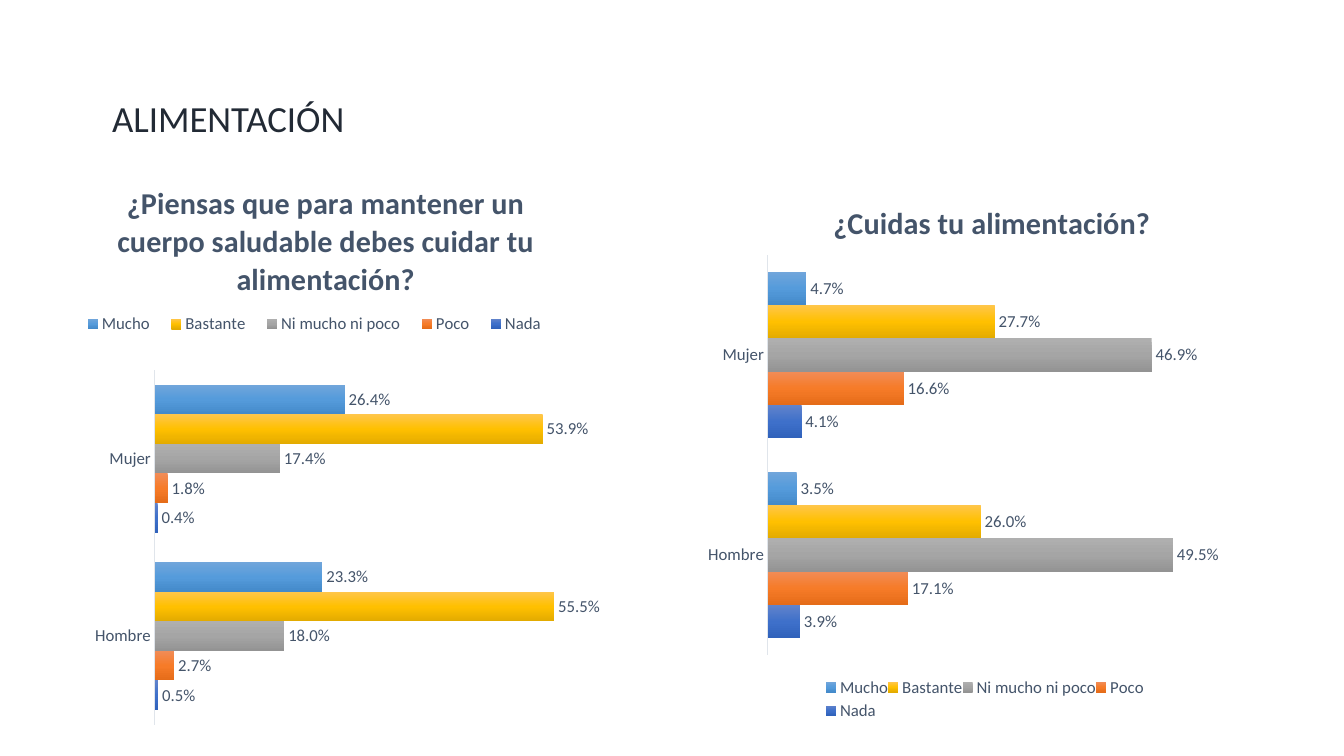
from dataclasses import dataclass

from pptx import Presentation
from pptx.chart.data import CategoryChartData
from pptx.dml.color import RGBColor
from pptx.enum.chart import XL_CHART_TYPE, XL_LABEL_POSITION, XL_LEGEND_POSITION, XL_TICK_MARK
from pptx.enum.text import MSO_ANCHOR, PP_ALIGN
from pptx.oxml import parse_xml
from pptx.oxml.ns import qn
from pptx.util import Pt

BAR = XL_CHART_TYPE.BAR_CLUSTERED
OUTSIDE = XL_LABEL_POSITION.OUTSIDE_END
BOTTOM = XL_LEGEND_POSITION.BOTTOM
NO_TICK = XL_TICK_MARK.NONE
TOP = MSO_ANCHOR.TOP
LEFT = PP_ALIGN.LEFT
NS_C = "http://schemas.openxmlformats.org/drawingml/2006/chart"
NS_A = "http://schemas.openxmlformats.org/drawingml/2006/main"

TITLE = "ALIMENTACIÓN"
TITLE_BOX = (102, 96, 1190, 77)
SEXES = ("Hombre", "Mujer")
ANSWERS = ("Nada", "Poco", "Ni mucho ni poco", "Bastante", "Mucho")
CHARTS = [
    {
        "question": "¿Piensas que para mantener un cuerpo saludable debes cuidar tu alimentación?",
        "box": (38, 153, 562, 573),
        "title_at": (112, 176),
        "plot": (155, 370, 433, 355),
        "legend": (72, 309, 486, 30),
        "values": [(0.005, 0.004), (0.027, 0.018), (0.18, 0.174), (0.555, 0.539), (0.233, 0.264)],
    },
    {
        "question": "¿Cuidas tu alimentación?",
        "box": (698, 172, 574, 552),
        "title_at": (828, 196),
        "plot": (768, 255, 491, 400),
        "legend": (826, 674, 318, 50),
        "values": [(0.039, 0.041), (0.171, 0.166), (0.495, 0.469), (0.26, 0.277), (0.035, 0.047)],
    },
]


@dataclass(frozen=True)
class Theme:
    font: str = "Calibri"
    title: str = "222A35"
    text: str = "44546A"
    axis: str = "E0E5EB"
    title_size: float = 26.3
    question_size: float = 21.6
    label_size: float = 12
    gradients: tuple = (
        ("6183CB", "3E70CA", "3062BB"),
        ("F18C57", "F67B28", "E56C19"),
        ("AFAFAF", "A5A5A5", "939393"),
        ("FFC64B", "FFC000", "E3AB00"),
        ("71A6DB", "559BDB", "448ACA"),
    )


T = Theme()
NUMBER_FORMAT = "###0.0%"


def px(n):
    return round(n * 914400 / 100.8)


def style(font, size, color, bold=False):
    font.name, font.size, font.bold = T.font, Pt(size), bold
    font.color.rgb = RGBColor.from_string(color)


def place(element, index, box, area, inner=False):
    for old in element.findall(qn("c:layout")):
        element.remove(old)
    x, y, w, h = box
    parts = [("xMode", "edge"), ("yMode", "edge")]
    if inner:
        parts.insert(0, ("layoutTarget", "inner"))
    parts += [("x", round((area[0] - x) / w, 4)), ("y", round((area[1] - y) / h, 4))]
    if len(area) == 4:
        parts += [("w", round(area[2] / w, 4)), ("h", round(area[3] / h, 4))]
    body = "".join(f'<c:{name} val="{val}"/>' for name, val in parts)
    element.insert(index, parse_xml(
        f'<c:layout xmlns:c="{NS_C}"><c:manualLayout>{body}</c:manualLayout></c:layout>'))


def shade(series, colors):
    series.format.fill.solid()
    sp_pr = series._element.find(qn("c:spPr"))
    stops = "".join(f'<a:gs pos="{i * 50000}"><a:srgbClr val="{c}"/></a:gs>'
                    for i, c in enumerate(colors))
    sp_pr.replace(sp_pr.find(qn("a:solidFill")), parse_xml(
        f'<a:gradFill xmlns:a="{NS_A}" rotWithShape="1"><a:gsLst>{stops}</a:gsLst>'
        '<a:lin ang="5400000" scaled="0"/></a:gradFill>'))


def add_bars(s, spec):
    data = CategoryChartData(number_format=NUMBER_FORMAT)
    data.categories = SEXES
    for answer, values in zip(ANSWERS, spec["values"]):
        data.add_series(answer, values)
    box = spec["box"]
    chart = s.shapes.add_chart(BAR, *map(px, box), data).chart
    style(chart.font, T.label_size, T.text)

    chart.has_title = True
    tf = chart.chart_title.text_frame
    tf.text = spec["question"]
    style(tf.paragraphs[0].font, T.question_size, T.text, True)
    place(chart.chart_title._element, 1, box, spec["title_at"])

    chart.has_legend = True
    chart.legend.position = BOTTOM
    chart.legend.include_in_layout = False
    style(chart.legend.font, T.label_size, T.text)
    place(chart.legend._element, 1, box, spec["legend"])

    cat = chart.category_axis
    cat.major_tick_mark = cat.minor_tick_mark = NO_TICK
    cat.format.line.color.rgb = RGBColor.from_string(T.axis)
    cat.format.line.width = Pt(0.75)
    val = chart.value_axis
    val.visible = False
    val.has_major_gridlines = False
    val.minimum_scale, val.maximum_scale = 0, 0.6

    plot = chart.plots[0]
    plot.gap_width = 100
    plot.vary_by_categories = False
    place(plot._element.getparent(), 0, box, spec["plot"], inner=True)
    for series, colors in zip(plot.series, T.gradients):
        shade(series, colors)
        labels = series.data_labels
        labels.show_value = True
        labels.position = OUTSIDE
        labels.number_format = NUMBER_FORMAT
        labels.number_format_is_linked = False
        style(labels.font, T.label_size, T.text)


def main():
    prs = Presentation()
    prs.slide_width, prs.slide_height = px(1344), px(756)
    s = prs.slides.add_slide(prs.slide_layouts[5])
    for spec in CHARTS:
        add_bars(s, spec)
    title = s.shapes.title
    title.left, title.top, title.width, title.height = map(px, TITLE_BOX)
    tf = title.text_frame
    tf.text = TITLE
    tf.word_wrap = True
    tf.vertical_anchor = TOP
    p = tf.paragraphs[0]
    p.alignment = LEFT
    p.line_spacing = 0.9
    style(p.font, T.title_size, T.title)
    prs.save("out.pptx")


if __name__ == "__main__":
    main()
